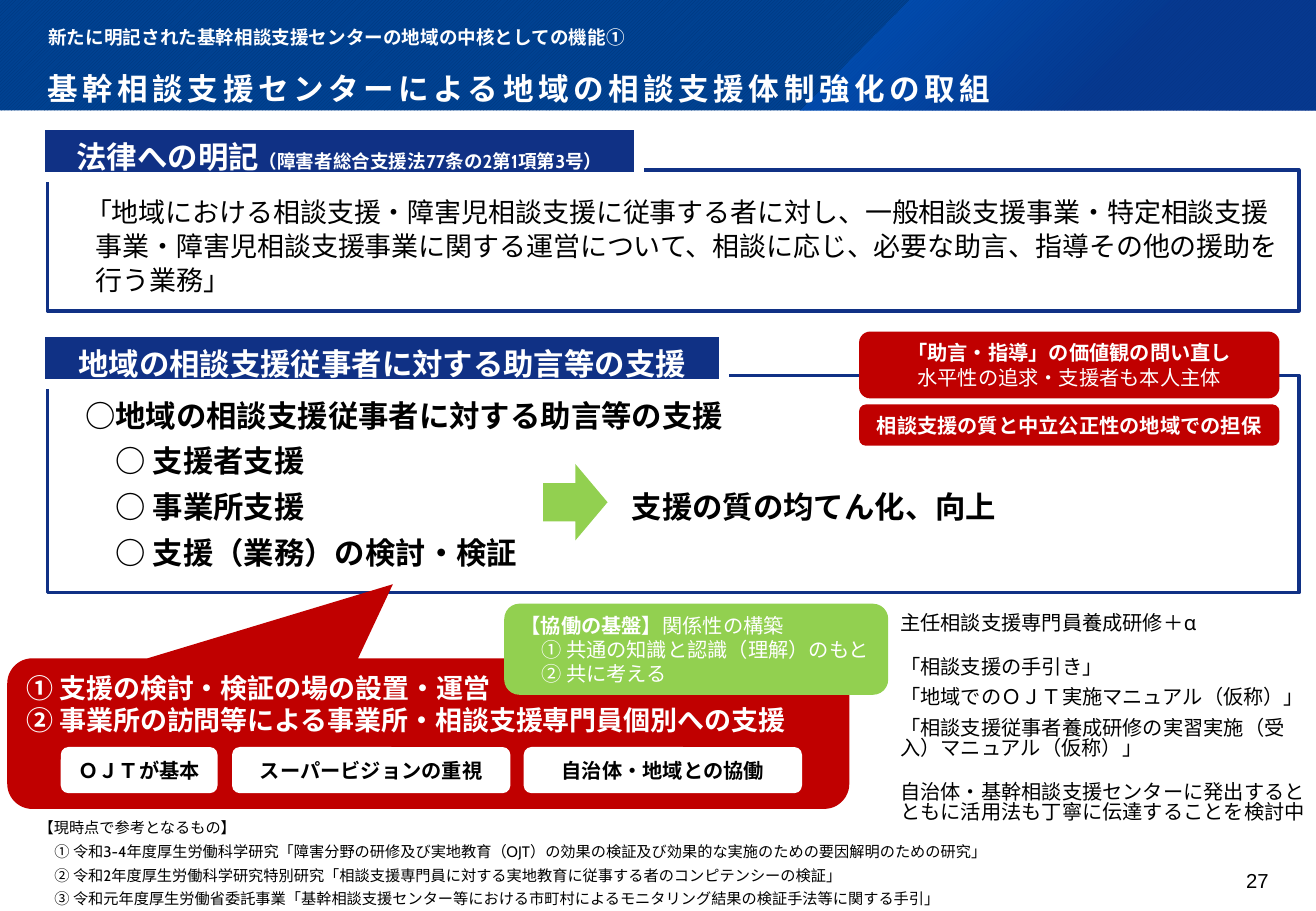
from pptx import Presentation
from pptx.dml.color import RGBColor
from pptx.enum.dml import MSO_PATTERN
from pptx.enum.shapes import MSO_SHAPE as SHAPE
from pptx.enum.text import MSO_ANCHOR as ANCHOR, PP_ALIGN as ALIGN
from pptx.oxml import parse_xml
from pptx.oxml.ns import nsdecls, qn
from pptx.util import Inches, Pt

NAVY, RED, GREEN, WHITE, BLACK = "103185", "C00000", "92D050", "FFFFFF", "000000"
CABIN, NOTO = "Cabin", "Noto Sans CJK JP"
CENTERED = {"alignment": ALIGN.CENTER}
BODY = {"line_spacing": Pt(20), "space_after": Pt(7)}
HEADING = {"alignment": ALIGN.CENTER, "line_spacing": 1.3, "space_after": Pt(8)}
CAPTION = {"line_spacing": 1.2, "space_after": Pt(6)}
NOTE = {"line_spacing": Pt(8), "space_after": Pt(6)}
GUIDE = {"line_spacing": Pt(12), "space_after": Pt(6)}


def rgb(value):
    """Return the colour for a hex string."""
    return RGBColor.from_string(value)


def apply(target, values):
    """Set each named attribute of the target."""
    for name, value in values.items():
        setattr(target, name, value)


def add_span(para, text, size, color=BLACK, bold=False, font=CABIN, spacing=0):
    """Add one formatted run to a paragraph."""
    span = para.add_run()
    span.text = text
    apply(span.font, {"size": Pt(size), "bold": bold, "name": font})
    span.font.color.rgb = rgb(color)
    props = span.font._element
    if spacing:
        props.set("spc", str(int(spacing * 100)))
    props.append(parse_xml(f'<a:ea {nsdecls("a")} typeface="{font}"/>'))


def write(box, lines, style, layout=None, anchor=ANCHOR.TOP, margins=(0.1, 0.05, 0.1, 0.05)):
    """Write (spans, left margin, first indent, layout) lines into a box."""
    frame = box.text_frame
    sides = ("margin_left", "margin_top", "margin_right", "margin_bottom")
    apply(frame, dict(zip(sides, map(Inches, margins)), word_wrap=True, vertical_anchor=anchor))
    for index, (spans, left, first, extra) in enumerate(lines):
        para = frame.add_paragraph() if index else frame.paragraphs[0]
        apply(para, {"alignment": ALIGN.LEFT, **(layout or {}), **extra})
        props = para._p.get_or_add_pPr()
        props.set("marL", str(Inches(left)))
        props.set("indent", str(Inches(first)))
        for text, change in spans:
            add_span(para, text, **{**style, **change})


def line(*spans, left=0, first=0, **extra):
    """Describe one paragraph from strings or (text, change) pairs."""
    pairs = [(span, {}) if isinstance(span, str) else span for span in spans]
    return pairs, left, first, extra


def add_box(page, kind, place, fill=None, outline=None, width=0, adjust=()):
    """Add a preset shape with a plain fill and outline."""
    box = page.shapes.add_shape(kind, *map(Inches, place))
    box.shadow.inherit = False
    for index, value in enumerate(adjust):
        box.adjustments[index] = value
    if fill:
        box.fill.solid()
        box.fill.fore_color.rgb = rgb(fill)
    else:
        box.fill.background()
    if outline:
        box.line.color.rgb = rgb(outline)
        box.line.width = Pt(width)
    else:
        box.line.fill.background()
    return box


def add_text(page, place, lines, style, layout=None, **options):
    """Add a wrapped text box."""
    write(page.shapes.add_textbox(*map(Inches, place)), lines, style, layout, **options)


def add_badge(page, place, fill, lines, color=WHITE, layout=CENTERED):
    """Add a rounded label with bold text."""
    box = add_box(page, SHAPE.ROUNDED_RECTANGLE, place, fill)
    write(box, lines, {"size": 12, "color": color, "bold": True}, layout, ANCHOR.MIDDLE)


def add_panel(page, top, height, lines, style):
    """Add an outlined content panel."""
    box = add_box(page, SHAPE.RECTANGLE, (0.39, top, 10.3, height), None, NAVY, 2)
    write(box, lines, style, BODY, margins=(0.31, 0.2, 0.16, 0.2))


def add_heading(page, top, width, *spans):
    """Add a navy heading that cuts into a panel's top edge."""
    box = add_box(page, SHAPE.ROUNDED_RECTANGLE, (0.33, top, width, 0.43), NAVY, WHITE, 6, (0,))
    style = {"size": 18, "color": WHITE, "bold": True}
    write(box, [line(*spans)], style, HEADING, ANCHOR.MIDDLE)


def add_banner(page):
    """Add the patterned title banner with its slanted gradient end."""
    band = add_box(page, SHAPE.RECTANGLE, (0, 0, 10.83, 0.91), NAVY)
    band.fill.patterned()
    band.fill.pattern = MSO_PATTERN.DARK_UPWARD_DIAGONAL
    band.fill.fore_color.rgb = rgb("003579")
    band.fill.back_color.rgb = rgb("004292")
    builder = page.shapes.build_freeform(Inches(7.49), 0, scale=1.0)
    corners = [(10.83, 0), (10.83, 0.91), (6.58, 0.91)]
    builder.add_line_segments([tuple(map(Inches, corner)) for corner in corners], close=True)
    slant = builder.convert_to_shape()
    slant.shadow.inherit = False
    slant.line.fill.background()
    slant.fill.gradient()
    stops = "".join(
        f'<a:gs pos="{place}000"><a:srgbClr val="{color}"><a:alpha val="{alpha}000"/></a:srgbClr></a:gs>'
        for place, color, alpha in ((0, "0064DF", 50), (62, "0C338E", 55)))
    props = slant._element.spPr
    props.replace(props.find(qn("a:gradFill")), parse_xml(
        f'<a:gradFill {nsdecls("a")}><a:gsLst>{stops}</a:gsLst><a:path path="circle">'
        '<a:fillToRect r="100000" b="100000"/></a:path></a:gradFill>'))
    style = {"color": WHITE, "bold": True}
    add_text(page, (0, 0, 10.83, 0.91), [line("基幹相談支援センターによる地域の相談支援体制強化の取組")],
             {**style, "size": 18.1, "spacing": 2.7}, {"line_spacing": 0.9},
             anchor=ANCHOR.BOTTOM, margins=(0.39, 0.36, 0.36, 0.14))
    add_text(page, (0.3, 0.13, 6.32, 0.32),
             [line("新たに明記された基幹相談支援センターの地域の中核としての機能①")],
             {**style, "size": 11}, CAPTION)


def add_law(page):
    """Add the section that quotes the law."""
    quote = ("「地域における相談支援・障害児相談支援に従事する者に対し、一般相談支援事業・特定相談支援事業・"
             "障害児相談支援事業に関する運営について、相談に応じ、必要な助言、指導その他の援助を行う業務」")
    add_panel(page, 1.4, 1.16, [line(quote, left=0.09, first=-0.09)], {"size": 16, "font": NOTO})
    add_heading(page, 1.03, 4.93, "法律への明記",
                ("（障害者総合支援法77条の2第1項第3号）", {"size": 11}))


def add_support(page):
    """Add the section on support for local workers."""
    heading = "地域の相談支援従事者に対する助言等の支援"
    items = ["支援者支援", "事業所支援", "支援（業務）の検討・検証"]
    lines = [line(f"○{heading}", left=0.09, first=-0.09)]
    lines += [line(f"○ {item}", left=0.25) for item in items]
    add_panel(page, 3.09, 1.79, lines, {"size": 18, "font": NOTO, "bold": True})
    add_heading(page, 2.73, 5.63, heading)
    add_box(page, SHAPE.RIGHT_ARROW, (4.47, 3.82, 0.53, 0.63), GREEN)
    add_text(page, (5.1, 3.91, 3.57, 0.45), [line("支援の質の均てん化、向上")],
             {"size": 18, "bold": True}, CAPTION)
    add_badge(page, (7.07, 2.73, 3.46, 0.55), RED, [
        line("「助言・指導」の価値観の問い直し"),
        line(("水平性の追求・支援者も本人主体", {"bold": False}))])
    add_badge(page, (7.07, 3.33, 3.46, 0.34), RED, [line("相談支援の質と中立公正性の地域での担保")])


def add_methods(page):
    """Add the red callout, its labels and the green base note."""
    callout = add_box(page, SHAPE.ROUNDED_RECTANGULAR_CALLOUT, (0.06, 5.42, 6.93, 1.24), RED,
                      adjust=(-0.042, -0.992, 0.167))
    write(callout, [line("① 支援の検討・検証の場の設置・運営"),
                    line("② 事業所の訪問等による事業所・相談支援専門員個別への支援")],
          {"size": 16, "color": WHITE, "bold": True})
    for left, width, label in ((0.5, 1.29, "ＯＪＴが基本"), (1.91, 2.29, "スーパービジョンの重視"),
                               (4.31, 2.29, "自治体・地域との協働")):
        add_badge(page, (left, 6.15, width, 0.38), WHITE, [line(label)], BLACK)
    plain = {"bold": False}
    add_badge(page, (4.15, 4.97, 3.16, 0.75), GREEN, [
        line("【協働の基盤】", ("関係性の構築", plain)),
        line(("① 共通の知識と認識（理解）のもと", plain), left=0.17),
        line(("② 共に考える", plain), left=0.17)], layout=None)


def add_references(page):
    """Add the guides, the source notes and the page number."""
    add_text(page, (7.31, 5.01, 3.62, 1.84), [
        line("主任相談支援専門員養成研修＋α"),
        line("「相談支援の手引き」", space_before=Pt(8)),
        line("「地域でのＯＪＴ実施マニュアル（仮称）」"),
        line("「相談支援従事者養成研修の実習実施（受入）マニュアル（仮称）」"),
        line("自治体・基幹相談支援センターに発出するとともに活用法も丁寧に伝達することを検討中",
             space_before=Pt(8))], {"size": 12}, GUIDE)
    notes = [
        "① 令和3-4年度厚生労働科学研究「障害分野の研修及び実地教育（OJT）の効果の検証及び効果的な実施のための要因解明のための研究」",
        "② 令和2年度厚生労働科学研究特別研究「相談支援専門員に対する実地教育に従事する者のコンピテンシーの検証」",
        "③ 令和元年度厚生労働省委託事業「基幹相談支援センター等における市町村によるモニタリング結果の検証手法等に関する手引」"]
    add_text(page, (0.22, 6.73, 9.76, 0.8),
             [line("【現時点で参考となるもの】")] + [line(note, left=0.13) for note in notes],
             {"size": 9}, NOTE)
    add_text(page, (9.75, 7.15, 0.69, 0.3), [line("27")], {"size": 12, "font": "Arial"},
             {"alignment": ALIGN.RIGHT}, margins=(0, 0, 0, 0))


def main():
    """Build the slide and save it."""
    deck = Presentation()
    apply(deck, {"slide_width": Inches(10.83), "slide_height": Inches(7.5)})
    page = deck.slides.add_slide(deck.slide_layouts[6])
    for add_part in (add_banner, add_law, add_support, add_methods, add_references):
        add_part(page)
    deck.save("out.pptx")


if __name__ == "__main__":
    main()
